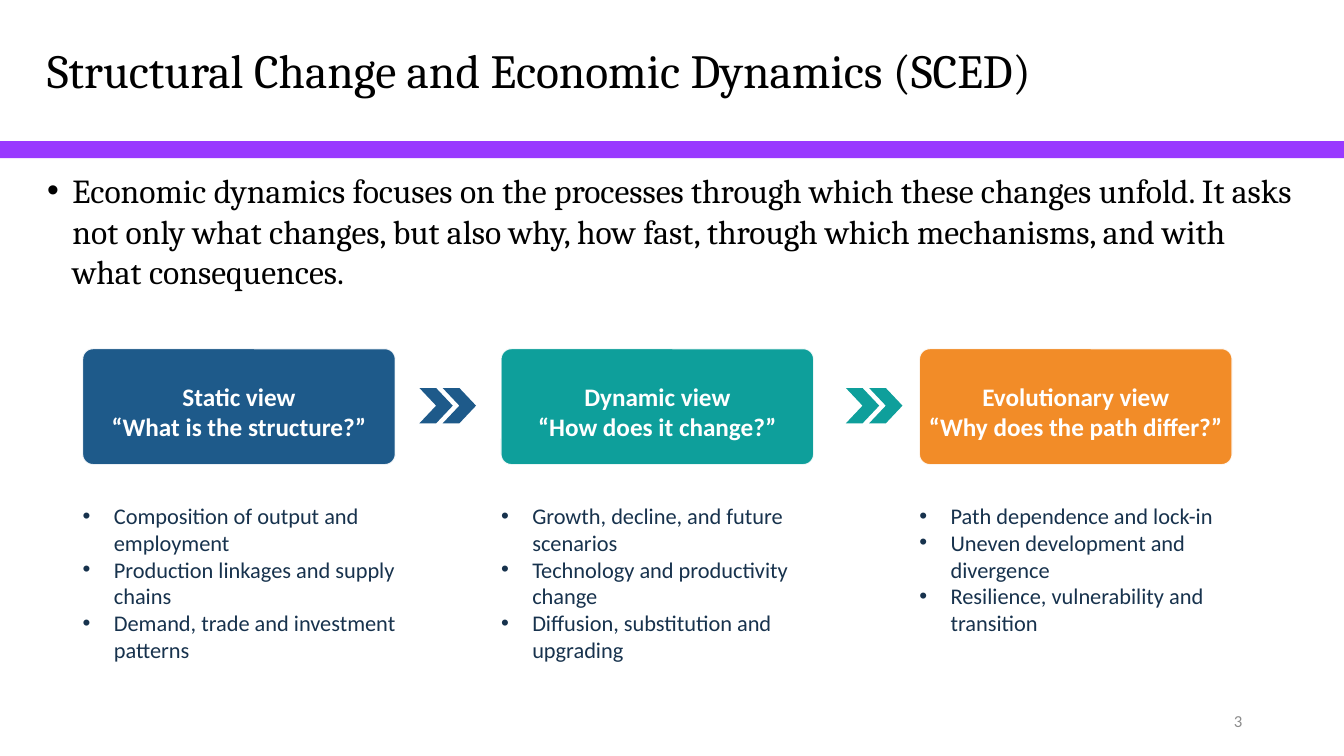
from dataclasses import dataclass

import pptx
import pptx.dml.color
import pptx.enum.shapes
import pptx.enum.text
import pptx.oxml.ns
import pptx.util
from lxml import etree
from pptx.shapes.autoshape import Shape
from pptx.slide import Slide

ALIGN = pptx.enum.text.PP_ALIGN
ANCHOR = pptx.enum.text.MSO_ANCHOR
SHAPE = pptx.enum.shapes.MSO_SHAPE

COLORS = {
    "rule": "993AFF",
    "heading": "000000",
    "static": "1E5A8A",
    "dynamic": "0E9F9B",
    "evolutionary": "F28C28",
    "white": "FFFFFF",
    "list": "17324D",
    "number": "8C8C8C",
}

SLIDE_WIDTH = pptx.util.Inches(13.33)
SLIDE_HEIGHT = pptx.util.Inches(7.5)

# Percent of the slide's width
FIRST_COLUMN, COLUMN_PITCH, CARD_WIDTH = 6.15, 31.13, 23.26
LIST_WIDTH = 24.76
CHEVRON_WIDTH, CHEVRON_STEP = 2.48, 1.73


@dataclass(frozen=True)
class Box:
    """A rectangle in percent of the slide's width and height."""

    left: float
    top: float
    width: float
    height: float

    def lengths(self) -> tuple[int, int, int, int]:
        return (
            round(self.left * SLIDE_WIDTH / 100),
            round(self.top * SLIDE_HEIGHT / 100),
            round(self.width * SLIDE_WIDTH / 100),
            round(self.height * SLIDE_HEIGHT / 100),
        )


@dataclass(frozen=True)
class TextStyle:
    size: float
    color: str
    font: str = "Calibri"
    bold: bool = False
    align: ALIGN = ALIGN.LEFT
    anchor: ANCHOR = ANCHOR.TOP
    has_margins: bool = False
    bullet_indent: float = 0
    line_spacing: float = 1.0


@dataclass(frozen=True)
class View:
    color: str
    label: str
    label_inset: float
    points: str
    chevron_left: float | None = None


TITLE = TextStyle(34, "heading", "Cambria", anchor=ANCHOR.MIDDLE, has_margins=True, line_spacing=0.9)
BODY = TextStyle(24, "heading", "Cambria", has_margins=True, bullet_indent=0.25)
NUMBER = TextStyle(12, "number", align=ALIGN.RIGHT, anchor=ANCHOR.MIDDLE, has_margins=True)
LABEL = TextStyle(18, "white", bold=True, align=ALIGN.CENTER, anchor=ANCHOR.MIDDLE)
LIST = TextStyle(16, "list", bullet_indent=0.31)

VIEWS = [
    View(
        "static",
        "Static view\n“What is the structure?”",
        1.2,
        "Composition of output and employment\n"
        "Production linkages and supply chains\n"
        "Demand, trade and investment patterns",
        31.21,
    ),
    View(
        "dynamic",
        "Dynamic view\n“How does it change?”",
        1.2,
        "Growth, decline, and future scenarios\n"
        "Technology and productivity change\n"
        "Diffusion, substitution and upgrading",
        62.94,
    ),
    View(
        "evolutionary",
        "Evolutionary view\n“Why does the path differ?”",
        0.6,
        "Path dependence and lock-in\n"
        "Uneven development and divergence\n"
        "Resilience, vulnerability and transition",
    ),
]


def rgb(color: str) -> pptx.dml.color.RGBColor:
    return pptx.dml.color.RGBColor.from_string(COLORS[color])


def add_text(slide: Slide, box: Box, text: str, style: TextStyle) -> None:
    frame = slide.shapes.add_textbox(*box.lengths()).text_frame
    frame.word_wrap = True
    frame.vertical_anchor = style.anchor
    if not style.has_margins:
        frame.margin_left = frame.margin_right = 0
        frame.margin_top = frame.margin_bottom = 0
    frame.text = text
    for paragraph in frame.paragraphs:
        paragraph.alignment = style.align
        paragraph.line_spacing = style.line_spacing
        if style.bullet_indent:
            add_bullet(paragraph, style.bullet_indent)
        for run in paragraph.runs:
            run.font.name = style.font
            run.font.size = pptx.util.Pt(style.size)
            run.font.bold = style.bold
            run.font.color.rgb = rgb(style.color)


def add_bullet(paragraph: pptx.text.text._Paragraph, indent: float) -> None:
    properties = paragraph._p.get_or_add_pPr()
    properties.set("marL", str(pptx.util.Inches(indent)))
    properties.set("indent", str(-pptx.util.Inches(indent)))
    qn = pptx.oxml.ns.qn
    etree.SubElement(properties, qn("a:buFont"), typeface="Arial")
    etree.SubElement(properties, qn("a:buChar"), char="•")


def add_filled(shapes: pptx.shapes.shapetree._BaseGroupShapes, kind: SHAPE, box: Box, color: str) -> Shape:
    shape = shapes.add_shape(kind, *box.lengths())
    shape.shadow.inherit = False
    shape.fill.solid()
    shape.fill.fore_color.rgb = rgb(color)
    shape.line.fill.background()
    return shape


def add_card(slide: Slide, left: float, color: str) -> None:
    """Draw a rounded card with a thin, slightly transparent white edge."""
    card = add_filled(slide.shapes, SHAPE.ROUNDED_RECTANGLE, Box(left, 46.13, CARD_WIDTH, 15.33), color)
    card.adjustments[0] = 0.09
    card.line.color.rgb = rgb("white")
    card.line.width = pptx.util.Pt(0.8)
    qn = pptx.oxml.ns.qn
    edge_color = card.line._ln.find(".//" + qn("a:srgbClr"))
    etree.SubElement(edge_color, qn("a:alpha"), val="85000")


def add_double_chevron(slide: Slide, left: float, color: str) -> None:
    group = slide.shapes.add_group_shape()
    for position in range(2):
        box = Box(left + position * CHEVRON_STEP, 51.33, CHEVRON_WIDTH, 4.67)
        add_filled(group.shapes, SHAPE.CHEVRON, box, color)


def add_view(slide: Slide, column: int, view: View) -> None:
    left = FIRST_COLUMN + column * COLUMN_PITCH
    add_card(slide, left, view.color)
    label_width = CARD_WIDTH - 2 * view.label_inset
    add_text(slide, Box(left + view.label_inset, 48.4, label_width, 12), view.label, LABEL)
    add_text(slide, Box(left, 66.4, LIST_WIDTH, 18.67), view.points, LIST)
    if view.chevron_left is not None:
        add_double_chevron(slide, view.chevron_left, view.color)


def main() -> None:
    presentation = pptx.Presentation()
    presentation.slide_width = SLIDE_WIDTH
    presentation.slide_height = SLIDE_HEIGHT
    slide = presentation.slides.add_slide(presentation.slide_layouts[6])

    add_filled(slide.shapes, SHAPE.RECTANGLE, Box(0, 18.67, 100, 2.27), "rule")
    add_text(slide, Box(2.78, 0, 94.6, 19.33), "Structural Change and Economic Dynamics (SCED)", TITLE)
    add_text(
        slide,
        Box(2.78, 21.87, 94.6, 19.33),
        "Economic dynamics focuses on the processes through which these changes unfold. "
        "It asks not only what changes, but also why, how fast, through which mechanisms, "
        "and with what consequences.",
        BODY,
    )
    add_text(slide, Box(70.67, 92.67, 22.5, 5.33), "3", NUMBER)
    for column, view in enumerate(VIEWS):
        add_view(slide, column, view)

    presentation.save("out.pptx")


if __name__ == "__main__":
    main()
